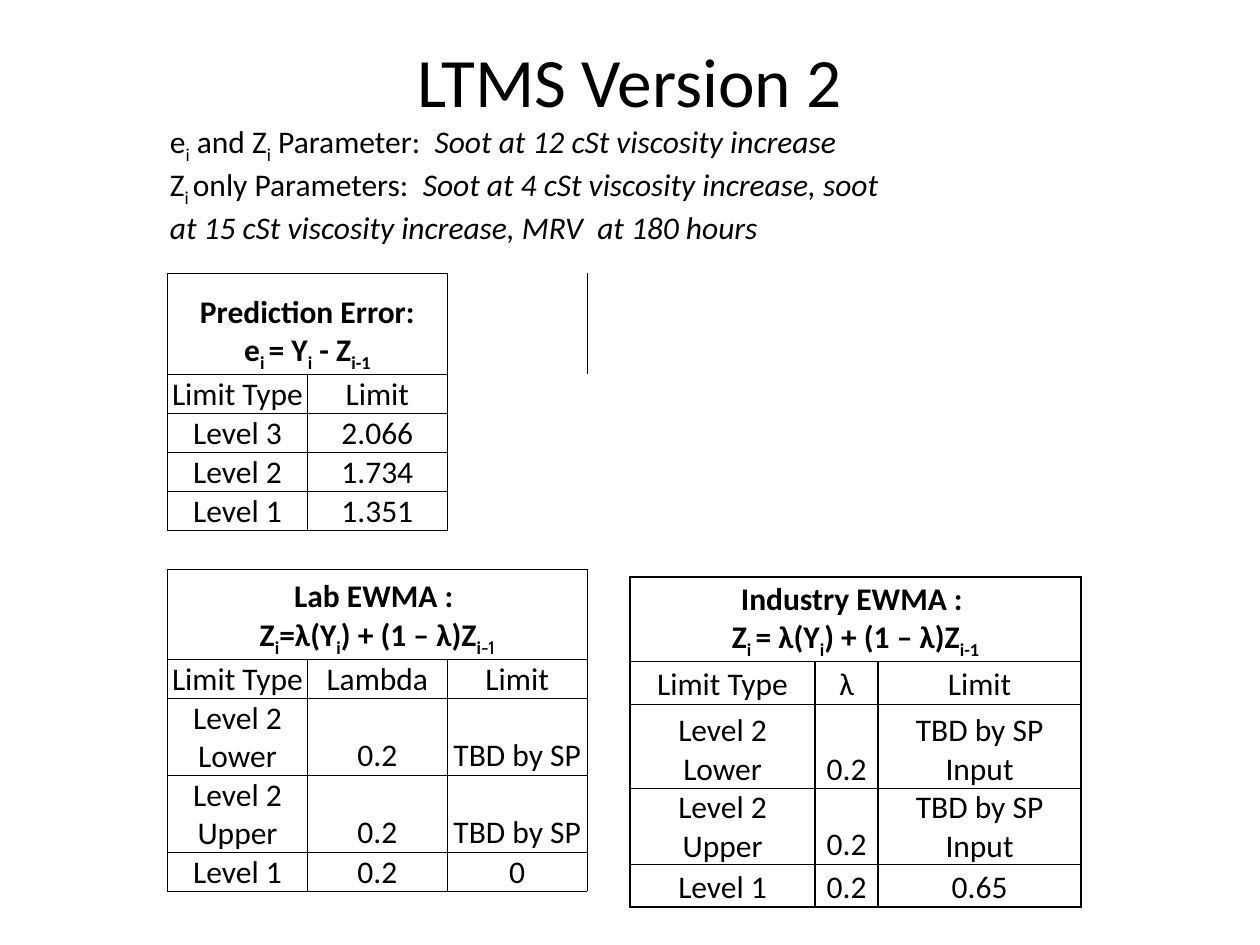
from lxml import etree
from pptx import Presentation
from pptx import util as u
from pptx.dml.color import RGBColor
from pptx.enum import text
from pptx.oxml import ns

BLACK = RGBColor(0, 0, 0)
FONT = "Calibri"
BODY_SIZE = 18
PLAIN_TABLE = "{2D5ABB26-0587-4C30-8999-92F81FD0307C}"


def format_span(span, size=BODY_SIZE, bold=False, italic=False):
    font = span.font
    font.name, font.size = FONT, u.Pt(size)
    font.bold, font.italic = bold, italic
    font.color.rgb = BLACK


def add_spans(para, marked, **style):
    """Parts between bars are alternately normal and subscript."""
    for index, part in enumerate(marked.split("|")):
        if not part:
            continue
        for piece in part.split("~"):
            span = para.add_run()
            span.text = piece
            format_span(span, **style)
            if index % 2:
                span.font._element.set("baseline", "-25000")


def place(shape, box):
    shape.left, shape.top, shape.width, shape.height = map(u.Inches, box)


def draw_borders(cell, sides, width):
    properties = cell._tc.get_or_add_tcPr()
    for side in "LRTB":
        if side in sides:
            line = etree.SubElement(properties, ns.qn(f"a:ln{side}"), w=str(u.Pt(width)))
            fill = etree.SubElement(line, ns.qn("a:solidFill"))
            etree.SubElement(fill, ns.qn("a:srgbClr"), val=str(BLACK))


def fill_cell(cell, content, insets, bold):
    cell.margin_left, cell.margin_top, cell.margin_right, cell.margin_bottom = map(u.Inches, insets)
    cell.vertical_anchor = text.MSO_ANCHOR.BOTTOM
    for index, marked in enumerate(content.split("\n")):
        frame = cell.text_frame
        para = frame.add_paragraph() if index else frame.paragraphs[0]
        para.alignment = text.PP_ALIGN.CENTER
        add_spans(para, marked, bold=bold)


def add_grid(page, box, widths, heights, rows, insets, line_width, borders=None):
    borders = borders or {}
    frame = page.shapes.add_table(len(heights), len(widths), *map(u.Inches, box))
    table = frame.table
    table.first_row = table.horz_banding = False
    table._tbl.tblPr.find(ns.qn("a:tableStyleId")).text = PLAIN_TABLE
    for column, width in zip(table.columns, widths):
        column.width = u.Inches(width)
    for row, height in zip(table.rows, heights):
        row.height = u.Inches(height)
    for r, contents in enumerate(rows):
        heading = "\n" in contents[0]
        for c in range(len(widths)):
            cell = table.cell(r, c)
            content = contents[c] if c < len(contents) else ""
            fill_cell(cell, content, insets, heading)
            draw_borders(cell, borders.get((r, c), "LRTB"), line_width)
            cell.fill.background()
        if heading:
            last = len(contents) - 1 if len(contents) > 1 else len(widths)
            table.cell(r, 0).merge(table.cell(r, last - 1))
    return table


def add_title(page, box):
    title = page.shapes.title
    place(title, box)
    frame = title.text_frame
    frame.text = "LTMS Version 2"
    frame.vertical_anchor = text.MSO_ANCHOR.TOP
    frame.margin_top = 0
    para = frame.paragraphs[0]
    para.alignment = text.PP_ALIGN.CENTER
    format_span(para.runs[0], size=39.6)


def add_parameters(page, box):
    frame = page.shapes.add_textbox(*map(u.Inches, box)).text_frame
    frame.word_wrap = True
    frame.margin_right = u.Inches(1.53)
    lines = [
        ("e|i| and Z|i| Parameter:  ", "Soot at 12 cSt viscosity increase"),
        ("Z|i |only Parameters:  ",
         "Soot at 4 cSt viscosity increase, soot at 15 cSt viscosity increase, MRV  at 180 hours"),
    ]
    for index, (label, value) in enumerate(lines):
        para = frame.add_paragraph() if index else frame.paragraphs[0]
        add_spans(para, label)
        add_spans(para, value, italic=True)


def add_lab_limits(page, box):
    rows = [
        ["Prediction Error:\ne|i |= Y|i| - Z|i-1", "", ""],
        ["Limit Type", "Limit"],
        ["Level 3", "2.066"],
        ["Level 2", "1.734"],
        ["Level 1", "1.351"],
        [""],
        ["Lab EWMA : \nZ|i|=λ(Y|i|) + (1 – λ)Z|i~-1"],
        ["Limit Type", "Lambda", "Limit"],
        ["Level 2 Lower", "0.2", "TBD by SP"],
        ["Level 2 Upper", "0.2", "TBD by SP"],
        ["Level 1", "0.2", "0"],
    ]
    heights = [0.8] + [0.27] * 5 + [0.71, 0.27, 0.54, 0.54, 0.27]
    borders = {(r, 2): "L" for r in range(5)}
    borders.update({(5, 0): "TB", (5, 1): "TB", (5, 2): "B"})
    table = add_grid(page, box, [box[2] / 3] * 3, heights, rows,
                     (0.01, 0.01, 0.01, 0), 0.5, borders)
    suffix = table.cell(6, 0).text_frame.paragraphs[1].runs[-1]
    suffix.font.name, suffix.font.bold = "Cabin", False


def add_industry_limits(page, box):
    rows = [
        ["Industry EWMA : \nZ|i |= λ(Y|i|) + (1 – λ)Z|i-1"],
        ["Limit Type", "λ", "Limit"],
        ["Level 2 Lower", "0.2", "TBD by SP Input"],
        ["Level 2 Upper", "0.2", "TBD by SP Input"],
        ["Level 1", "0.2", "0.65"],
    ]
    add_grid(page, box, [1.47, 0.5, 1.61], [0.67, 0.34, 0.67, 0.59, 0.34], rows,
             (0.07, 0, 0.07, 0), 1)


def main():
    deck = Presentation()
    deck.slide_width, deck.slide_height = u.Inches(10), u.Inches(7.5)
    page = deck.slides.add_slide(deck.slide_layouts[5])
    add_title(page, (0.5, 0.3, 9, 1.25))
    add_parameters(page, (1.25, 0.92, 7.33, 1.01))
    add_lab_limits(page, (1.33, 2.17, 3.33, 4.91))
    add_industry_limits(page, (5, 4.58, 3.58, 2.62))
    deck.save("out.pptx")


if __name__ == "__main__":
    main()
